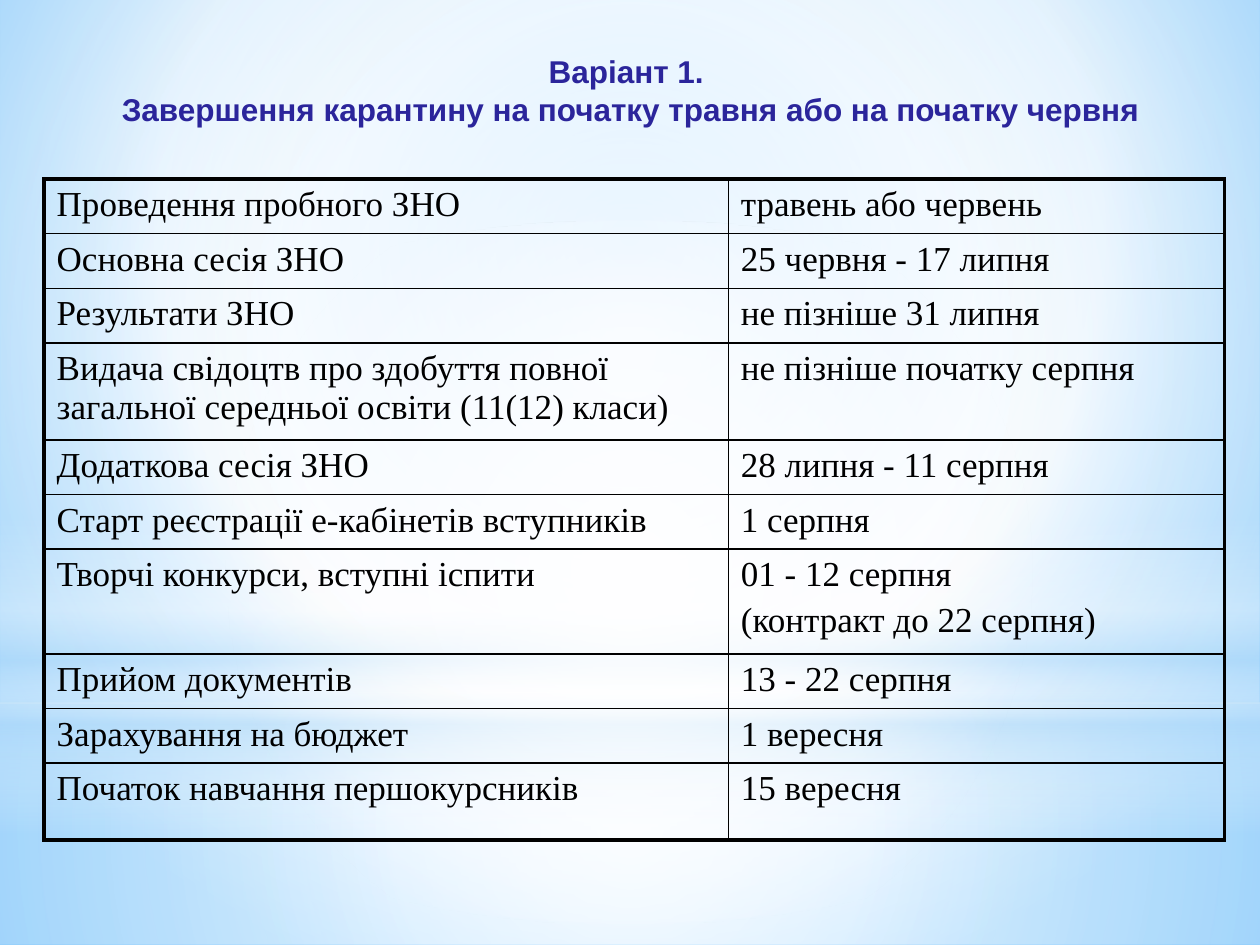
from dataclasses import dataclass
from typing import Optional

from lxml.etree import SubElement
from pptx import Presentation
from pptx.dml.color import RGBColor
from pptx.enum.shapes import MSO_SHAPE
from pptx.enum.text import MSO_ANCHOR, MSO_AUTO_SIZE, PP_ALIGN
from pptx.oxml.ns import qn
from pptx.util import Inches, Pt

WHITE = RGBColor(0xFF, 0xFF, 0xFF)
BLACK = RGBColor(0x00, 0x00, 0x00)
PALE_BLUE = RGBColor(0xB4, 0xDC, 0xFA)
SKY_BLUE = RGBColor(0x9E, 0xD5, 0xFF)
BRIGHT_BLUE = RGBColor(0x5B, 0xB9, 0xFF)
INDIGO = RGBColor(0x2B, 0x25, 0x9B)

OUTER_BORDER, INNER_BORDER = 2.25, 1


@dataclass
class Stop:
    position: int
    color: RGBColor
    opacity: int = 100


@dataclass
class Glow:
    kind: MSO_SHAPE
    top: float
    height: float
    stops: list[Stop]
    angle: Optional[int] = None


@dataclass
class Event:
    name: str
    date: str
    height: float = 0.43


GLOWS = [
    Glow(MSO_SHAPE.RECTANGLE, 5.58, 1.92,
         [Stop(0, WHITE, 91), Stop(37, WHITE, 76), Stop(100, PALE_BLUE, 79)]),
    Glow(MSO_SHAPE.RECTANGLE, 0, 5.58,
         [Stop(0, WHITE, 89), Stop(48, WHITE, 62), Stop(100, PALE_BLUE, 79)]),
    Glow(MSO_SHAPE.RECTANGLE, 4.12, 2.5,
         [Stop(0, WHITE, 0), Stop(29, WHITE, 30), Stop(45, PALE_BLUE, 40),
          Stop(55, WHITE, 26), Stop(65, PALE_BLUE, 60), Stop(100, WHITE, 0)], angle=90),
    Glow(MSO_SHAPE.OVAL, 1.75, 5.58, [Stop(0, WHITE), Stop(56, WHITE, 0)]),
]

EVENTS = [
    Event("Проведення пробного ЗНО", "травень або червень"),
    Event("Основна сесія ЗНО", "25 червня - 17 липня"),
    Event("Результати ЗНО", "не пізніше 31 липня"),
    Event("Видача свідоцтв про здобуття повної загальної середньої освіти (11(12) класи)",
          "не пізніше початку серпня", 0.77),
    Event("Додаткова сесія ЗНО", "28 липня - 11 серпня"),
    Event("Старт реєстрації е-кабінетів вступників ", "1 серпня"),
    Event("Творчі конкурси, вступні іспити", "01 - 12 серпня\n(контракт до 22 серпня)", 0.83),
    Event("Прийом документів ", "13 - 22 серпня"),
    Event("Зарахування на бюджет", "1 вересня"),
    Event("Початок навчання першокурсників ", "15 вересня", 0.61),
]


def set_gradient(fill, element, stops: list[Stop], angle: Optional[int] = None,
                 focus=(50, 50, 50, 50)) -> None:
    """Fill with a linear gradient, or a circular one when no angle is given."""
    fill.gradient()
    gradient = element.find(".//" + qn("a:gradFill"))
    for child in list(gradient):
        gradient.remove(child)
    stop_list = SubElement(gradient, qn("a:gsLst"))
    for stop in stops:
        mark = SubElement(stop_list, qn("a:gs"), pos=str(stop.position * 1000))
        color = SubElement(mark, qn("a:srgbClr"), val=str(stop.color))
        if stop.opacity < 100:
            SubElement(color, qn("a:alpha"), val=str(stop.opacity * 1000))
    if angle is not None:
        SubElement(gradient, qn("a:lin"), ang=str(angle * 60000), scaled="0")
    else:
        circle = SubElement(gradient, qn("a:path"), path="circle")
        sides = {side: str(value * 1000) for side, value in zip("ltrb", focus)}
        SubElement(circle, qn("a:fillToRect"), **sides)


def add_glow(page, glow: Glow) -> None:
    shape = page.shapes.add_shape(glow.kind, 0, Inches(glow.top), Inches(10), Inches(glow.height))
    shape.shadow.inherit = False
    shape.line.fill.background()
    set_gradient(shape.fill, shape._element, glow.stops, glow.angle)


def write_text(frame, text: str, *, font: str, size: float, color: RGBColor,
               bold: bool = False, align=PP_ALIGN.LEFT, gap: float = 0) -> None:
    """Write one paragraph a line, with the gap in points between paragraphs."""
    for index, line in enumerate(text.split("\n")):
        para = frame.add_paragraph() if index else frame.paragraphs[0]
        para.alignment = align
        para.space_before = Pt(gap if index else 0)
        span = para.add_run()
        span.text = line
        span.font.name = font
        span.font.size = Pt(size)
        span.font.bold = bold
        span.font.color.rgb = color


def set_borders(cell, widths: dict[str, float]) -> None:
    properties = cell._tc.get_or_add_tcPr()
    for side, width in widths.items():
        line = SubElement(properties, qn(f"a:ln{side}"), w=str(Pt(width)))
        fill = SubElement(line, qn("a:solidFill"))
        SubElement(fill, qn("a:srgbClr"), val=str(BLACK))


def add_schedule(page, events: list[Event]) -> None:
    height = sum(event.height for event in events)
    table = page.shapes.add_table(len(events), 2, Inches(0.35), Inches(1.42),
                                  Inches(9.37), Inches(height)).table
    table.first_row = table.horz_banding = False
    for column, width in zip(table.columns, (5.43, 3.94)):
        column.width = Inches(width)
    last_row = len(events) - 1
    for row, event in enumerate(events):
        table.rows[row].height = Inches(event.height)
        for column, text in enumerate((event.name, event.date)):
            cell = table.cell(row, column)
            edges = {"L": column == 0, "R": column == 1, "T": row == 0, "B": row == last_row}
            set_borders(cell, {side: OUTER_BORDER if outer else INNER_BORDER
                               for side, outer in edges.items()})
            cell.fill.background()
            write_text(cell.text_frame, text, font="Times New Roman", size=20,
                       color=BLACK, gap=4)


def add_title(page, text: str) -> None:
    title = page.shapes.title
    title.left, title.top = Inches(0.28), Inches(0.36)
    title.width, title.height = Inches(9.45), Inches(0.71)
    frame = title.text_frame
    frame.word_wrap = True
    frame.auto_size = MSO_AUTO_SIZE.SHAPE_TO_FIT_TEXT
    frame.vertical_anchor = MSO_ANCHOR.MIDDLE
    write_text(frame, text, font="Arial", size=18, color=INDIGO, bold=True,
               align=PP_ALIGN.CENTER)
    # Bring the title in front of the glows
    page.shapes._spTree.append(title._element)


def main() -> None:
    deck = Presentation()
    deck.slide_width, deck.slide_height = Inches(10), Inches(7.5)
    page = deck.slides.add_slide(deck.slide_layouts[5])

    # Background
    set_gradient(page.background.fill, page._element,
                 [Stop(0, SKY_BLUE), Stop(60, WHITE), Stop(100, BRIGHT_BLUE)],
                 focus=(20, 10, 20, 60))
    for glow in GLOWS:
        add_glow(page, glow)

    # Title and schedule
    add_title(page, "Варіант 1. \nЗавершення карантину на початку травня або на початку червня")
    add_schedule(page, EVENTS)
    deck.save("out.pptx")


if __name__ == "__main__":
    main()
